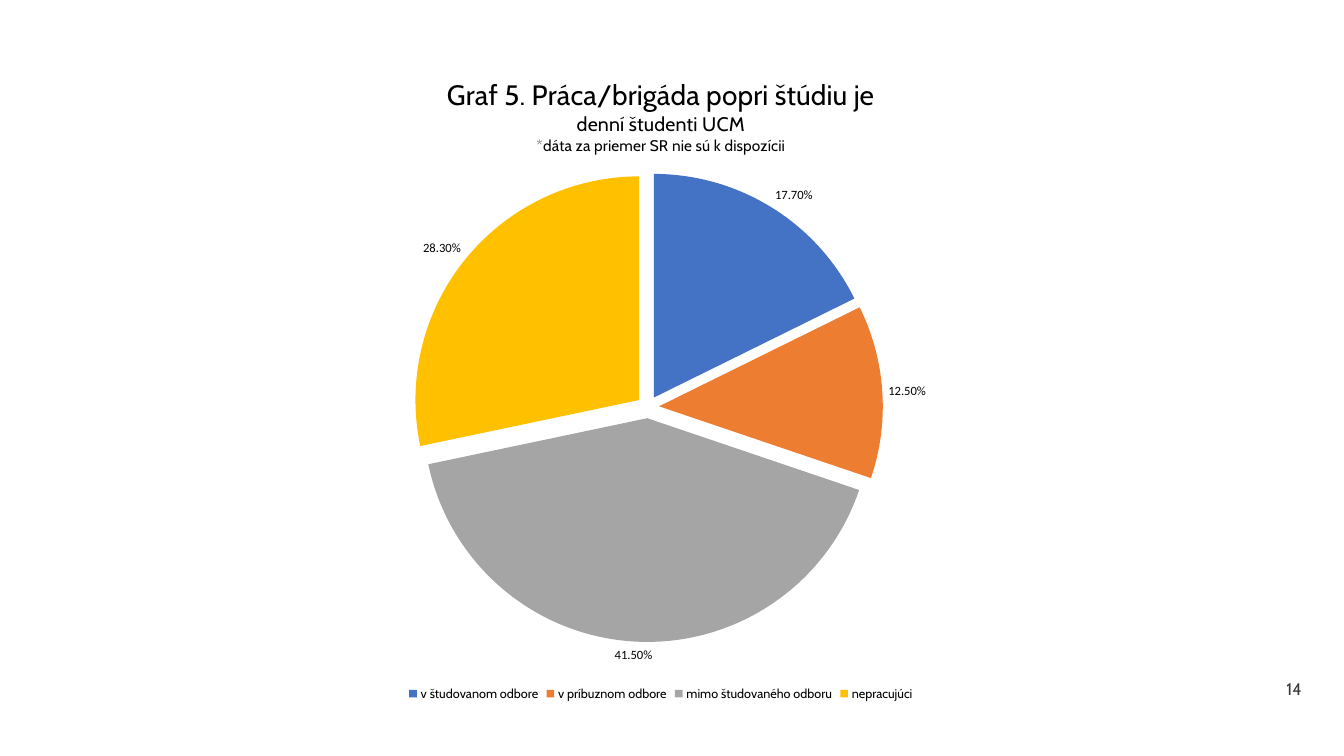
from lxml import etree
from pptx import Presentation
from pptx import util as u
from pptx.chart.data import CategoryChartData
from pptx.dml.color import RGBColor
from pptx.enum import chart as ch, text
from pptx.oxml.ns import qn

BLACK = RGBColor(0, 0, 0)
GREY = RGBColor(0x59, 0x59, 0x59)
NUMBER_COLOR = RGBColor(0x3D, 0x39, 0x35)
WHITE = RGBColor(0xFF, 0xFF, 0xFF)
BLUE = RGBColor(0x44, 0x72, 0xC4)
ORANGE = RGBColor(0xED, 0x7D, 0x31)
SILVER = RGBColor(0xA5, 0xA5, 0xA5)
GOLD = RGBColor(0xFF, 0xC0, 0x00)

ANSWERS = [
    ("v študovanom odbore", 0.177, BLUE),
    ("v príbuznom odbore", 0.125, ORANGE),
    ("mimo študovaného odboru", 0.415, SILVER),
    ("nepracujúci", 0.283, GOLD),
]
TITLE_LINES = [
    (20, [("Graf 5. Práca/brigáda popri štúdiu je", BLACK)]),
    (14, [("denní študenti UCM", BLACK)]),
    (11, [("*", GREY), ("dáta za priemer SR nie sú k dispozícii", BLACK)]),
]
EXPLOSION = 5


def style(font, size, color, name="Cabin"):
    """Set size, colour and typeface of a font."""
    font.size = u.Pt(size)
    font.color.rgb = color
    font.name = name
    font.bold = False


def place(parent, index, **shares):
    """Fix a chart part at the given shares of the chart's size."""
    for old in parent.findall(qn("c:layout")):
        parent.remove(old)
    layout = etree.Element(qn("c:layout"))
    manual = etree.SubElement(layout, qn("c:manualLayout"))
    if "w" in shares:
        etree.SubElement(manual, qn("c:layoutTarget")).set("val", "inner")
    for mode in ("xMode", "yMode"):
        etree.SubElement(manual, qn("c:" + mode)).set("val", "edge")
    for key, share in shares.items():
        etree.SubElement(manual, qn("c:" + key)).set("val", str(share))
    parent.insert(index, layout)


def add_title(chart):
    """Write the three-line chart title."""
    chart.has_title = True
    frame = chart.chart_title.text_frame
    for number, (size, pieces) in enumerate(TITLE_LINES):
        line = frame.add_paragraph() if number else frame.paragraphs[0]
        style(line.font, size, BLACK)
        for words, color in pieces:
            run = line.add_run()
            run.text = words
            style(run.font, size, color)
    chart.chart_title.include_in_layout = False
    place(chart.chart_title._element, 1, x=0.29, y=0.035)


def color_slices(answers):
    """Colour the slices and pull them apart."""
    for index, (_, _, color) in enumerate(ANSWERS):
        fill = answers.points[index].format.fill
        fill.solid()
        fill.fore_color.rgb = color
    series = answers._element
    slices = series.findall(qn("c:dPt"))
    anchors = [slices[0]] + [piece.find(qn("c:spPr")) for piece in slices]
    for anchor in anchors:
        explosion = etree.Element(qn("c:explosion"))
        explosion.set("val", str(EXPLOSION))
        anchor.addprevious(explosion)


def add_work_chart(slide, left, top, width, height):
    """Draw the pie of work alongside study in the given box."""
    data = CategoryChartData(number_format="0.00%")
    data.categories = [name for name, _, _ in ANSWERS]
    data.add_series("Series 1", [share for _, share, _ in ANSWERS])
    chart = slide.shapes.add_chart(
        ch.XL_CHART_TYPE.PIE, left, top, width, height, data).chart
    style(chart.font, 10, BLACK, "Calibri")
    add_title(chart)

    pie = chart.plots[0]
    pie.vary_by_categories = True
    color_slices(pie.series[0])
    pie.has_data_labels = True
    labels = pie.data_labels
    labels.show_value = True
    labels.show_percentage = False
    labels.number_format = "0.00%"
    labels.number_format_is_linked = False
    labels.position = ch.XL_LABEL_POSITION.OUTSIDE_END
    style(labels.font, 9, BLACK, "Calibri")

    chart.has_legend = True
    chart.legend.position = ch.XL_LEGEND_POSITION.BOTTOM
    chart.legend.include_in_layout = False
    style(chart.legend.font, 9, BLACK)
    plot_area = chart._chartSpace.find(".//" + qn("c:plotArea"))
    place(plot_area, 0, x=0.26, y=0.186, w=0.455, h=0.717)


def add_page_number(slide, left, top, width, height):
    """Put the page number in the given box, to the right."""
    frame = slide.shapes.add_textbox(left, top, width, height).text_frame
    frame.word_wrap = True
    frame.vertical_anchor = text.MSO_ANCHOR.MIDDLE
    frame.text = "14"
    number = frame.paragraphs[0]
    number.alignment = text.PP_ALIGN.RIGHT
    style(number.runs[0].font, 12, NUMBER_COLOR)


def main():
    """Build the slide and save it."""
    deck = Presentation()
    deck.slide_width, deck.slide_height = u.Inches(13.33), u.Inches(7.5)
    slide = deck.slides.add_slide(deck.slide_layouts[6])
    slide.background.fill.solid()
    slide.background.fill.fore_color.rgb = WHITE
    add_page_number(slide, *map(u.Inches, (12.25, 6.67, 0.76, 0.32)))
    add_work_chart(slide, *map(u.Inches, (1.43, 0.5, 10.25, 6.5)))
    deck.save("out.pptx")


if __name__ == "__main__":
    main()
